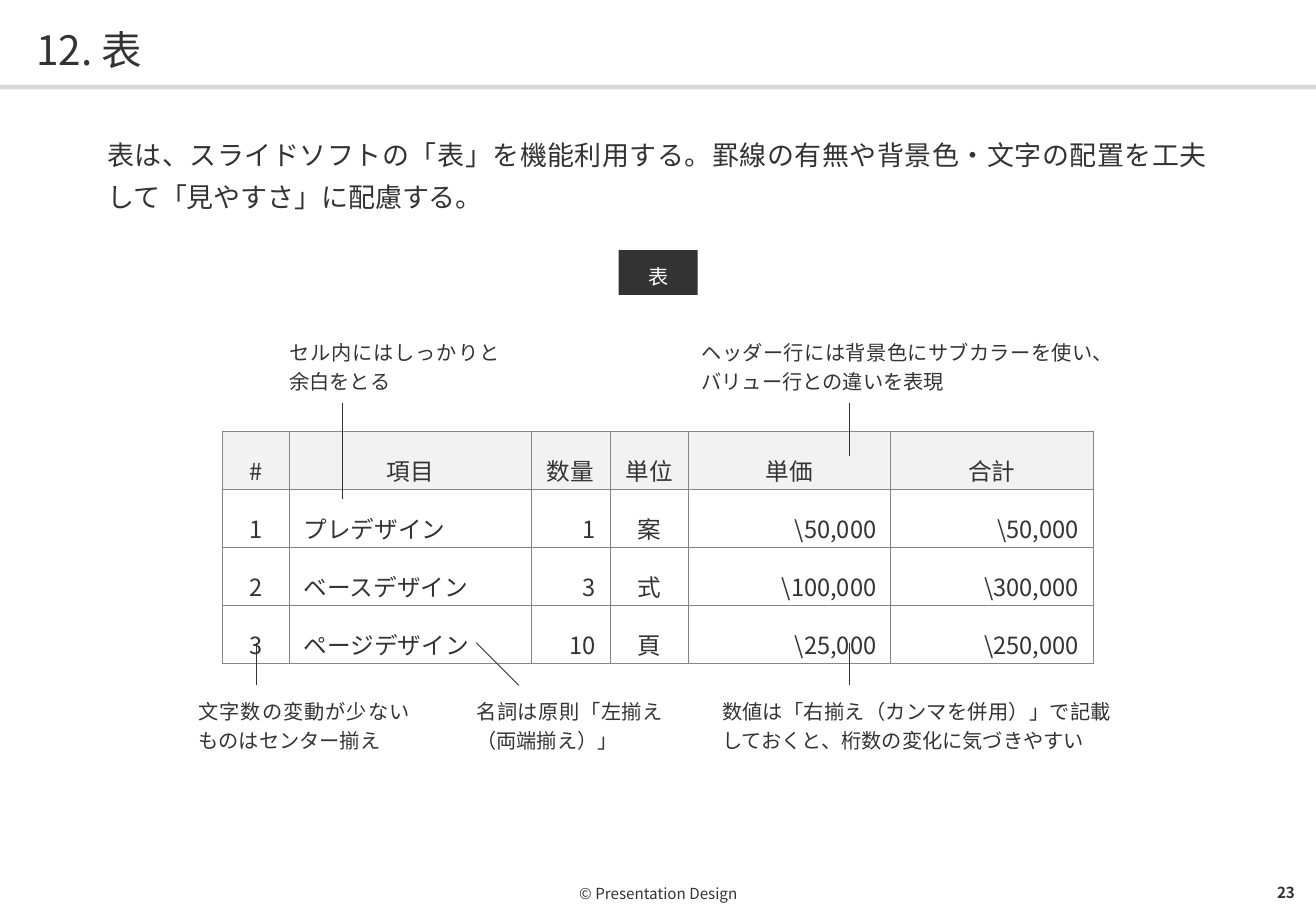
from lxml import etree
from pptx import Presentation
from pptx import util as u
from pptx.dml.color import RGBColor
from pptx.enum import shapes, text
from pptx.oxml.ns import qn

Cm = u.Cm
FONT, DARK, GREY = "Noto Sans CJK JP", "333333", "D9D9D9"
HEADER, BORDER, WHITE = "F2F2F2", "858585", "FFFFFF"
ALIGN = {"l": text.PP_ALIGN.LEFT, "c": text.PP_ALIGN.CENTER,
         "r": text.PP_ALIGN.RIGHT, "j": text.PP_ALIGN.JUSTIFY}
TOP, MIDDLE = text.MSO_ANCHOR.TOP, text.MSO_ANCHOR.MIDDLE


def rgb(value):
    return RGBColor.from_string(value)


def write(tf, words, size, align="l", spacing=1.0, color=DARK, bold=False):
    p = tf.paragraphs[0]
    p.alignment = ALIGN[align]
    p.line_spacing = spacing
    r = p.add_run()
    r.text = words
    for name, value in {"size": u.Pt(size), "name": FONT, "bold": bold}.items():
        setattr(r.font, name, value)
    r.font.color.rgb = rgb(color)
    etree.SubElement(r.font._element, qn("a:ea"), typeface=FONT)


prs = Presentation()
prs.slide_width, prs.slide_height = Cm(27.52), Cm(19.05)
s = prs.slides.add_slide(prs.slide_layouts[6])

# Title rule and badge
for box, color, words in [
    ((0, 1.77, 27.52, 0.1), GREY, ""),
    ((12.94, 5.23, 1.65, 0.94), DARK, "表"),
]:
    sp = s.shapes.add_shape(shapes.MSO_SHAPE.RECTANGLE, *map(Cm, box))
    sp.shadow.inherit = False
    sp.fill.solid()
    sp.fill.fore_color.rgb = rgb(color)
    sp.line.fill.background()
    if words:
        tf = sp.text_frame
        frame = {"margin_left": Cm(0.3), "margin_right": Cm(0.3), "margin_top": Cm(0.2),
                 "margin_bottom": Cm(0.15), "vertical_anchor": MIDDLE}
        for name, value in frame.items():
            setattr(tf, name, value)
        write(tf, words, 12, "c", 1.2, WHITE)

# Price table
widths = [1.4, 5.06, 1.65, 1.64, 4.23, 4.23]
rows = [
    ["#", "項目", "数量", "単位", "単価", "合計"],
    ["1", "プレデザイン", "1", "案", "\\50,000", "\\50,000"],
    ["2", "ベースデザイン", "3", "式", "\\100,000", "\\300,000"],
    ["3", "ページデザイン", "10", "頁", "\\25,000", "\\250,000"],
]
row_height = 1.21
table = s.shapes.add_table(len(rows), len(widths), Cm(4.65), Cm(9.02),
                           Cm(sum(widths)), Cm(row_height * len(rows))).table
table.first_row = table.horz_banding = False
for column, width in zip(table.columns, widths):
    column.width = Cm(width)
cell_format = {"margin_left": Cm(0.3), "margin_right": Cm(0.3), "margin_top": Cm(0.3),
               "margin_bottom": Cm(0.05), "vertical_anchor": MIDDLE}
for i, row in enumerate(rows):
    table.rows[i].height = Cm(row_height)
    for j, words in enumerate(row):
        cell = table.cell(i, j)
        for name, value in cell_format.items():
            setattr(cell, name, value)
        write(cell.text_frame, words, 14, "c" if i == 0 else "clrcrr"[j], 1.2)
        # Borders come before the fill in the cell properties
        tcPr = cell._tc.get_or_add_tcPr()
        for side in ("a:lnL", "a:lnR", "a:lnT", "a:lnB"):
            ln = etree.SubElement(tcPr, qn(side), w=str(u.Pt(0.5)))
            fill = etree.SubElement(ln, qn("a:solidFill"))
            etree.SubElement(fill, qn("a:srgbClr"), val=BORDER)
        if i == 0:
            cell.fill.solid()
            cell.fill.fore_color.rgb = rgb(HEADER)
        else:
            cell.fill.background()

# Title, introduction, callouts and footer
note = (12, "j", 1.2)
for box, anchor, words, style in [
    ((0.76, 0.43, 26.01, 1.09), MIDDLE, "12. 表", (24, "l", 1.1)),
    ((2.24, 2.69, 23.04, 1.73), TOP,
     "表は、スライドソフトの「表」を機能利用する。罫線の有無や背景色・文字の配置を工夫して「見やすさ」に配慮する。",
     (16, "j", 1.3)),
    ((6.05, 7.01, 4.4, 1.19), TOP, "セル内にはしっかりと余白をとる", note),
    ((14.67, 7.01, 8.2, 1.19), TOP,
     "ヘッダー行には背景色にサブカラーを使い、バリュー行との違いを表現", note),
    ((4.15, 14.53, 4.42, 1.19), TOP, "文字数の変動が少ないものはセンター揃え", note),
    ((9.96, 14.53, 3.91, 1.19), TOP, "名詞は原則「左揃え（両端揃え）」", note),
    ((15.1, 14.53, 8.15, 1.19), TOP,
     "数値は「右揃え（カンマを併用）」で記載しておくと、桁数の変化に気づきやすい", note),
    ((2.26, 18.31, 23.01, 0.74), MIDDLE, "© Presentation Design", (9, "c")),
    ((25.76, 18.31, 1.32, 0.71), MIDDLE, "23", (9, "r", 1.0, DARK, True)),
]:
    tf = s.shapes.add_textbox(*map(Cm, box)).text_frame
    frame = {"word_wrap": True, "vertical_anchor": anchor, "margin_left": 0,
             "margin_right": 0, "margin_top": 0, "margin_bottom": 0}
    for name, value in frame.items():
        setattr(tf, name, value)
    write(tf, words, *style)

# Leader lines from the callouts into the table
for ends in [
    (7.16, 10.44, 7.16, 8.43),
    (17.76, 9.53, 17.76, 8.43),
    (5.36, 14.33, 5.36, 13.44),
    (10.85, 14.33, 9.96, 13.44),
    (17.76, 14.33, 17.76, 13.44),
]:
    line = s.shapes.add_connector(shapes.MSO_CONNECTOR.STRAIGHT, *map(Cm, ends))
    line.line.color.rgb = rgb(DARK)
    line.line.width = u.Pt(0.5)
    etree.SubElement(line._element.spPr, qn("a:effectLst"))

prs.save("out.pptx")
